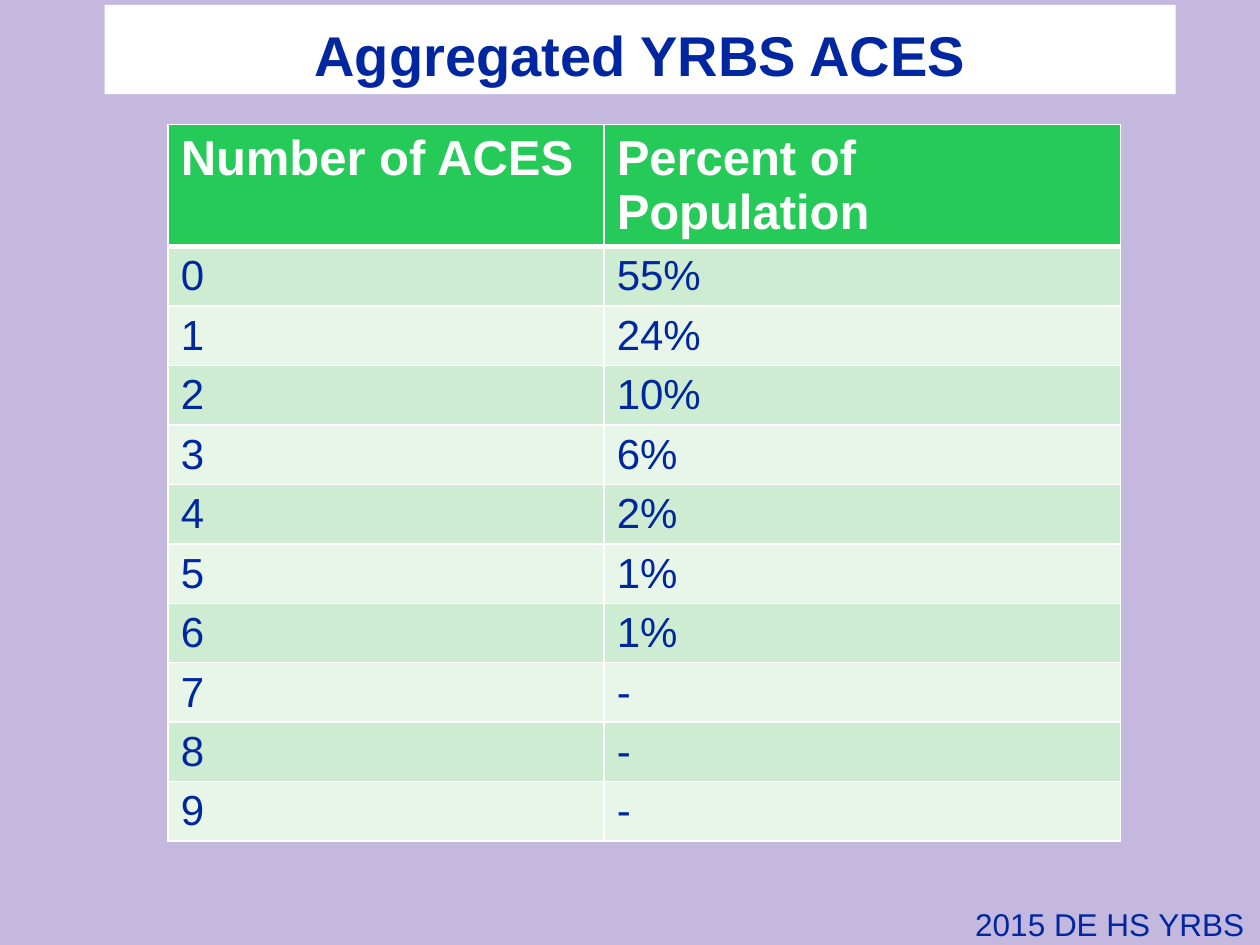
from lxml.etree import SubElement
from pptx import Presentation
from pptx.dml.color import RGBColor
from pptx.enum.shapes import MSO_SHAPE as SHAPE
from pptx.enum.text import MSO_ANCHOR as ANCHOR, PP_ALIGN as ALIGN
from pptx.oxml.ns import qn
from pptx.util import Cm, Pt

# Content
TITLE = "Aggregated YRBS ACES"
SOURCE = "2015 DE HS YRBS"
HEADER = ("Number of ACES", "Percent of Population")
PERCENTS = ["55%", "24%", "10%", "6%", "2%", "1%", "1%", "-", "-", "-"]
ROWS = [HEADER] + [(str(n), pct) for n, pct in enumerate(PERCENTS)]

COLORS = {
    "background": "C5B8DF",
    "white": "FFFFFF",
    "navy": "00279F",
    "header": "26CA59",
    "odd": "CDECD1",
    "even": "E8F6EA",
}
COL_WIDTHS = (8.79, 10.41)
HEADER_HEIGHT, ROW_HEIGHT = 2.18, 1.07


def rgb(name):
    return RGBColor.from_string(COLORS[name])


def write(tf, text, size=24, color="navy", bold=False, align=ALIGN.LEFT):
    p = tf.paragraphs[0]
    p.alignment = align
    r = p.add_run()
    r.text = text
    r.font.name = "Arial"
    r.font.size = Pt(size)
    r.font.bold = bold
    r.font.color.rgb = rgb(color)


def fill(obj, color):
    obj.fill.solid()
    obj.fill.fore_color.rgb = rgb(color)


def set_borders(cell, **widths):
    tc_pr = cell._tc.get_or_add_tcPr()
    for i, (side, width) in enumerate(widths.items()):
        ln = tc_pr.makeelement(qn(f"a:ln{side}"), {"w": str(Pt(width))})
        solid = SubElement(ln, qn("a:solidFill"))
        SubElement(solid, qn("a:srgbClr"), val=COLORS["white"])
        tc_pr.insert(i, ln)


prs = Presentation()
prs.slide_width, prs.slide_height = Cm(25.4), Cm(19.05)
s = prs.slides.add_slide(prs.slide_layouts[6])
fill(s.background, "background")

# Title band
sp = s.shapes.add_shape(SHAPE.RECTANGLE, Cm(2.11), Cm(0.1), Cm(21.59), Cm(1.8))
sp.shadow.inherit = False
fill(sp, "white")
sp.line.fill.background()
sp.text_frame.vertical_anchor = ANCHOR.BOTTOM
write(sp.text_frame, TITLE, size=32, bold=True, align=ALIGN.CENTER)

# Table
heights = [HEADER_HEIGHT] + [ROW_HEIGHT] * len(PERCENTS)
table = s.shapes.add_table(len(ROWS), len(HEADER), Cm(3.39), Cm(2.51),
                           Cm(sum(COL_WIDTHS)), Cm(sum(heights))).table
for col, width in zip(table.columns, COL_WIDTHS):
    col.width = Cm(width)
for i, (values, height) in enumerate(zip(ROWS, heights)):
    table.rows[i].height = Cm(height)
    for j, value in enumerate(values):
        cell = table.cell(i, j)
        if i == 0:
            fill(cell, "header")
            write(cell.text_frame, value, size=28, color="white", bold=True)
        else:
            fill(cell, "odd" if i % 2 else "even")
            write(cell.text_frame, value)
        set_borders(cell, L=1, R=1, T=3 if i == 1 else 1, B=3 if i == 0 else 1)

# Source note
tb = s.shapes.add_textbox(Cm(19.41), Cm(18.11), Cm(5.99), Cm(1.02))
tb.text_frame.word_wrap = False
write(tb.text_frame, SOURCE, size=18)

prs.save("out.pptx")
